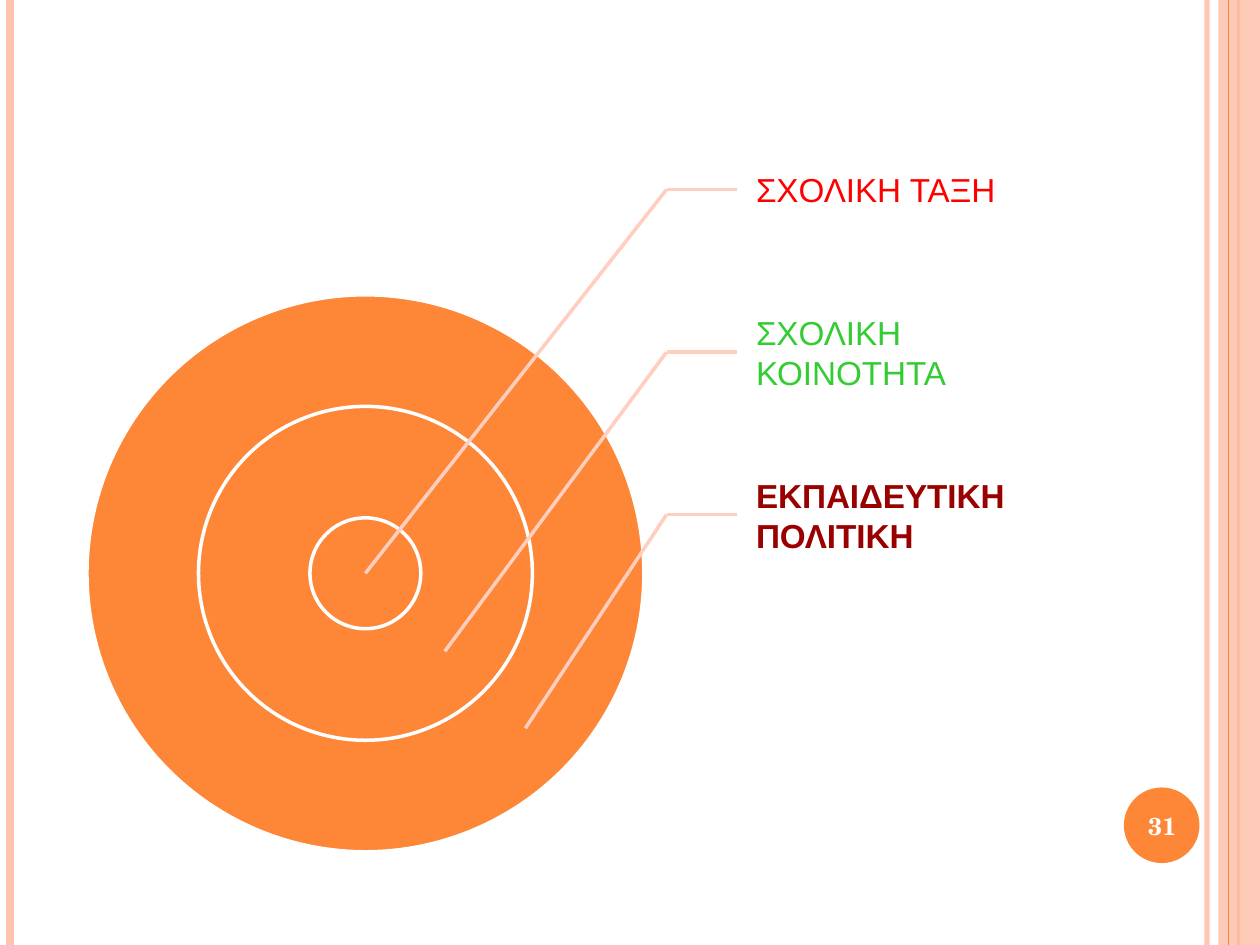
"""Build a slide with three nested circles and a callout label for each."""
from lxml import etree
from pptx import Presentation
from pptx import util as u
from pptx.dml.color import RGBColor
from pptx.enum import shapes, text
from pptx.oxml.ns import qn

ORANGE = RGBColor(0xFE, 0x86, 0x37)
PEACH = RGBColor(0xFE, 0xC3, 0xAE)
PALE = RGBColor(0xFF, 0xCE, 0xBF)
WHITE = RGBColor(0xFF, 0xFF, 0xFF)
RED = RGBColor(0xFF, 0x00, 0x00)
GREEN = RGBColor(0x33, 0xCC, 0x33)
MAROON = RGBColor(0x99, 0x00, 0x00)

COLS, ROWS = 100, 75
CENTRE = 29, 45.5
RADII = 22.1, 13.25, 4.4
LABEL_X, LABEL_TOP, LABEL_W, LABEL_H = 58.5, 8.6, 22.1, 12.9
ELBOW_X = 52.9
LABELS = [
    ("ΣΧΟΛΙΚΗ ΤΑΞΗ", RED, False, CENTRE),
    ("ΣΧΟΛΙΚΗ ΚΟΙΝΟΤΗΤΑ", GREEN, False, (35.3, 51.7)),
    ("ΕΚΠΑΙΔΕΥΤΙΚΗ ΠΟΛΙΤΙΚΗ", MAROON, True, (41.7, 57.8)),
]


class Deck:
    """Hold the style and the current slide, measured on a grid."""

    body_font, number_font = "Arial", "TeX Gyre Schola"

    def __init__(self):
        self.prs = Presentation()
        self.prs.slide_width, self.prs.slide_height = u.Inches(10), u.Inches(7.5)
        self.s = self.prs.slides.add_slide(self.prs.slide_layouts[6])

    def grid(self, *lengths):
        """Turn alternating columns and rows into slide lengths."""
        cells = self.prs.slide_width / COLS, self.prs.slide_height / ROWS
        return [u.Emu(round(n * cells[i % 2])) for i, n in enumerate(lengths)]

    def set_alpha(self, fill, percent):
        """Make a solid fill partly transparent."""
        clr = next(fill.iter(qn("a:srgbClr")))
        etree.SubElement(clr, qn("a:alpha"), val=str(percent * 1000))

    def line(self, start, end, color, width, alpha=100):
        """Draw a straight line."""
        sp = self.s.shapes.add_connector(
            shapes.MSO_CONNECTOR.STRAIGHT, *self.grid(*start, *end))
        sp.line.color.rgb = color
        sp.line.width = u.Pt(width)
        pr = sp._element.spPr
        etree.SubElement(pr, qn("a:effectLst"))
        if alpha < 100:
            self.set_alpha(pr, alpha)

    def rule(self, x, color, width, alpha=100):
        """Draw a vertical line down the whole slide."""
        self.line((x, 0), (x, ROWS), color, width, alpha)

    def shape(self, kind, box, color, outline=None, alpha=100):
        """Draw a filled preset shape."""
        sp = self.s.shapes.add_shape(kind, *self.grid(*box))
        sp.shadow.inherit = False
        sp.fill.solid()
        sp.fill.fore_color.rgb = color
        if alpha < 100:
            self.set_alpha(sp._element.spPr, alpha)
        if outline is None:
            sp.line.fill.background()
        else:
            sp.line.color.rgb = outline
            sp.line.width = u.Pt(2)

    def circle(self, centre, radius, color, outline=None):
        """Draw a circle about its centre."""
        x, y = centre
        box = x - radius, y - radius, 2 * radius, 2 * radius
        self.shape(shapes.MSO_SHAPE.OVAL, box, color, outline)

    def text(self, words, box, font, size, color, bold,
             align=text.PP_ALIGN.LEFT, inset=0.03):
        """Write text that is centred vertically in its box."""
        tf = self.s.shapes.add_textbox(*self.grid(*box)).text_frame
        tf.word_wrap = True
        tf.vertical_anchor = text.MSO_ANCHOR.MIDDLE
        tf.margin_left = u.Inches(inset)
        tf.margin_top = tf.margin_right = tf.margin_bottom = u.Inches(0.03)
        tf.text = words
        p = tf.paragraphs[0]
        p.alignment = align
        f = p.runs[0].font
        f.name, f.size, f.bold = font, u.Pt(size), bold
        f.color.rgb = color

    def frame(self, number):
        """Draw the border bands and the slide number."""
        self.rule(95.8, PEACH, 3, 93)
        self.rule(0.8, PEACH, 4.5)
        self.rule(98.3, ORANGE, 1.5)
        self.shape(shapes.MSO_SHAPE.RECTANGLE, (96.7, 0, 3.3, ROWS), PEACH, alpha=87)
        self.rule(97.5, ORANGE, 0.75)
        self.circle((92.2, 65.5), 3, ORANGE)
        self.text(number, (88.9, 62.7, 6.7, 5.7), self.number_font, 14, WHITE,
                  True, text.PP_ALIGN.CENTER)

    def callout(self, row, words, color, bold, target):
        """Write a label and lead a bent line from it to its ring."""
        top = LABEL_TOP + row * LABEL_H
        elbow = ELBOW_X, top + LABEL_H / 2
        self.text(words, (LABEL_X, top, LABEL_W, LABEL_H), self.body_font, 19,
                  color, bold, inset=0.15)
        self.line(elbow, (LABEL_X, elbow[1]), PALE, 2)
        self.line(elbow, target, PALE, 2)


def main():
    deck = Deck()
    deck.frame("31")
    for radius in RADII:
        deck.circle(CENTRE, radius, ORANGE, WHITE)
    for row, label in enumerate(LABELS):
        deck.callout(row, *label)
    deck.prs.save("out.pptx")


if __name__ == "__main__":
    main()
